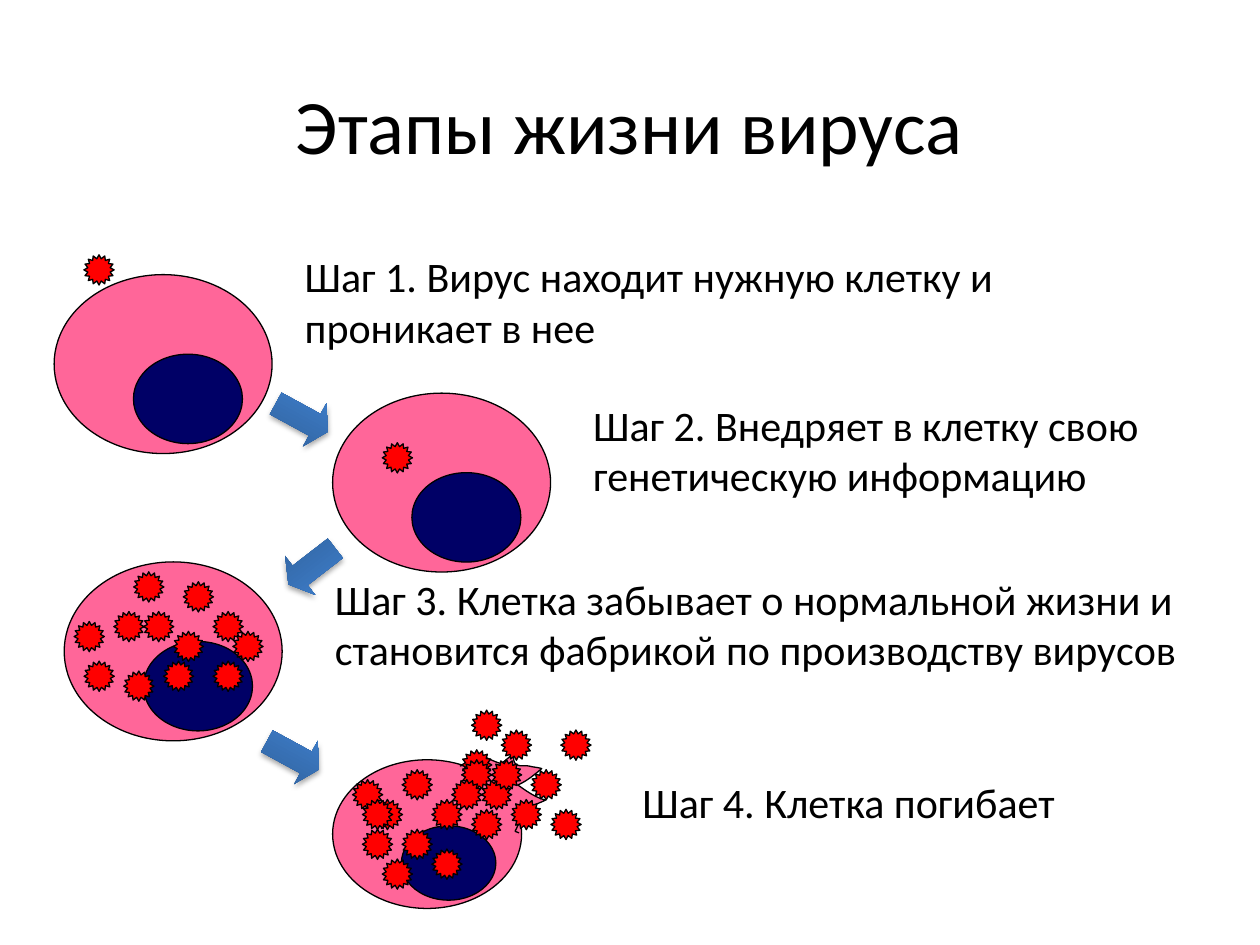
from lxml import etree
from pptx import Presentation
from pptx.dml.color import RGBColor
from pptx.enum.shapes import MSO_SHAPE as Kind
from pptx.enum.text import MSO_ANCHOR as Anchor, PP_ALIGN as Align
from pptx.oxml.ns import qn
from pptx.util import Inches, Pt

BLACK = RGBColor(0x00, 0x00, 0x00)
PINK = RGBColor(0xFF, 0x66, 0x99)
NAVY = RGBColor(0x00, 0x00, 0x66)
RED = RGBColor(0xFF, 0x00, 0x00)
DARK = RGBColor(0x2F, 0x5F, 0x99)
BLUE = RGBColor(0x3D, 0x7C, 0xC7)

GRID = 2 / 25.4
SIZE = 0.24

CELLS = [
    ((0.43, 2.18, 1.73, 1.42), [(3, -2)]),
    ((2.64, 3.12, 1.73, 1.42), [(5, 5)]),
    ((0.51, 4.46, 1.73, 1.42), [
        (10, 10), (5, 5), (6, 11), (1, 6), (7, 1), (12, 2),
        (8, 5), (15, 5), (2, 10), (15, 10), (11, 7), (17, 7)]),
]
BURST = ((2.64, 6.03, 1.5, 1.18), [
    (7, 7), (2, 2), (4, 4), (13, -1), (17, -3), (13, 0), (7, 1),
    (12, 2), (14, 5), (18, 4), (22, 5), (15, 2), (20, 1), (14, -5),
    (23, -3), (3, 7), (10, 4), (3, 4), (5, 10), (10, 9), (16, 0)])
TEAR = [
    (1.01, 0.05),
    (1.04, 0.04), (1.07, 0.04), (1.09, 0.03),
    (1.13, 0.02), (1.19, -0.03), (1.19, -0.03),
    (1.24, -0.01), (1.29, 0.02), (1.34, 0.03),
    (1.35, 0.02), (1.58, -0.16), (1.43, -0.06),
    (1.44, -0.03), (1.43, 0.01), (1.45, 0.03),
    (1.48, 0.06), (1.52, 0.04), (1.56, 0.05),
    (1.6, 0.06), (1.63, 0.06), (1.66, 0.07),
    (1.6, 0.12), (1.54, 0.17), (1.47, 0.2),
    (1.54, 0.25), (1.61, 0.3), (1.69, 0.32),
    (1.63, 0.35), (1.6, 0.35), (1.55, 0.4),
    (1.52, 0.48), (1.54, 0.49), (1.47, 0.52),
    (1.45, 0.58), (1.43, 0.56), (1.48, 0.58),
]
ARROWS = [(2.16, 3.12, 28.6), (2.24, 4.3, 142.3), (2.09, 5.8, 28.6)]
STEPS = [
    ((2.32, 1.94, 6.77, 0.9),
     "Шаг 1. Вирус находит нужную клетку и проникает в нее"),
    ((4.61, 3.12, 5.04, 0.91),
     "Шаг 2. Внедряет в клетку свою генетическую информацию"),
    ((2.56, 4.5, 7.17, 1.3),
     "Шаг 3. Клетка забывает о нормальной жизни и становится "
     "фабрикой по производству вирусов"),
    ((5, 6.11, 4.65, 0.5), "Шаг 4. Клетка погибает"),
]


def add_text(slide, box, text, size=24, align=Align.LEFT, anchor=Anchor.TOP):
    """Place one wrapped paragraph in the box."""
    frame = slide.shapes.add_textbox(*map(Inches, box)).text_frame
    frame.word_wrap = True
    frame.vertical_anchor = anchor
    para = frame.paragraphs[0]
    para.alignment = align
    run = para.add_run()
    run.text = text
    run.font.name = "Calibri"
    run.font.size = Pt(size)
    run.font.color.rgb = BLACK


def paint(shape, fill):
    """Give a shape a flat fill and a thin black outline."""
    shape.shadow.inherit = False
    shape.fill.solid()
    shape.fill.fore_color.rgb = fill
    shape.line.color.rgb = BLACK
    shape.line.width = Pt(0.75)


def add_shape(slide, kind, box, fill):
    """Add a painted preset shape in the box."""
    shape = slide.shapes.add_shape(kind, *map(Inches, box))
    paint(shape, fill)
    return shape


def add_cell(slide, box):
    """Draw a cell with its nucleus at the lower right."""
    left, top, wide, high = box
    add_shape(slide, Kind.OVAL, box, PINK)
    core = (left + wide * 4 / 11, top + high * 4 / 9, wide / 2, high / 2)
    add_shape(slide, Kind.OVAL, core, NAVY)


def add_germs(slide, box, spots):
    """Put viruses at grid spots counted from the cell's corner."""
    left, top = box[:2]
    for col, row in spots:
        place = (left + col * GRID, top + row * GRID, SIZE, SIZE)
        add_shape(slide, Kind.STAR_16_POINT, place, RED).adjustments[0] = 0.375


def bend(ends, count=6):
    """Return points along a cubic curve, without its start."""
    points = []
    for step in range(1, count + 1):
        t = step / count
        parts = ((1 - t) ** 3, 3 * t * (1 - t) ** 2, 3 * t * t * (1 - t), t ** 3)
        points.append(tuple(
            sum(part * end[axis] for part, end in zip(parts, ends))
            for axis in (0, 1)))
    return points


def add_tear(slide, box):
    """Draw the ragged break in the wall of the cell."""
    points = [TEAR[0]]
    for i in range(0, len(TEAR) - 1, 3):
        points += bend(TEAR[i:i + 4])
    spots = [(Inches(box[0] + x), Inches(box[1] + y)) for x, y in points]
    form = slide.shapes.build_freeform(*spots[0])
    form.add_line_segments(spots[1:], close=False)
    paint(form.convert_to_shape(), PINK)


def add_arrow(slide, left, top, turn):
    """Draw a turned block arrow with a gradient and a soft shadow."""
    arrow = slide.shapes.add_shape(
        Kind.RIGHT_ARROW, *map(Inches, (left, top, 0.47, 0.39)))
    arrow.adjustments[0] = 0.5
    arrow.adjustments[1] = 0.3
    arrow.rotation = turn
    arrow.fill.gradient()
    arrow.fill.gradient_angle = 90
    for stop, color, place in zip(
            arrow.fill.gradient_stops, (DARK, BLUE), (0, 0.8)):
        stop.color.rgb = color
        stop.position = place
    arrow.line.fill.background()
    arrow.shadow.inherit = False
    effects = arrow._element.spPr.find(qn("a:effectLst"))
    shade = etree.SubElement(
        effects, qn("a:outerShdw"), blurRad=str(Pt(3.1)), dist=str(Pt(1.8)),
        dir="5400000", rotWithShape="0")
    tint = etree.SubElement(shade, qn("a:srgbClr"), val=str(BLACK))
    etree.SubElement(tint, qn("a:alpha"), val="35000")


def main():
    """Build the slide and save it."""
    deck = Presentation()
    deck.slide_width, deck.slide_height = Inches(10), Inches(7.5)
    slide = deck.slides.add_slide(deck.slide_layouts[6])
    add_text(slide, (0.5, 0.36, 9, 1.25), "Этапы жизни вируса",
             size=44, align=Align.CENTER, anchor=Anchor.MIDDLE)
    for box, spots in CELLS:
        add_cell(slide, box)
        add_germs(slide, box, spots)
    box, spots = BURST
    add_cell(slide, box)
    add_tear(slide, box)
    add_germs(slide, box, spots)
    for arrow in ARROWS:
        add_arrow(slide, *arrow)
    for box, text in STEPS:
        add_text(slide, box, text)
    deck.save("out.pptx")


if __name__ == "__main__":
    main()
